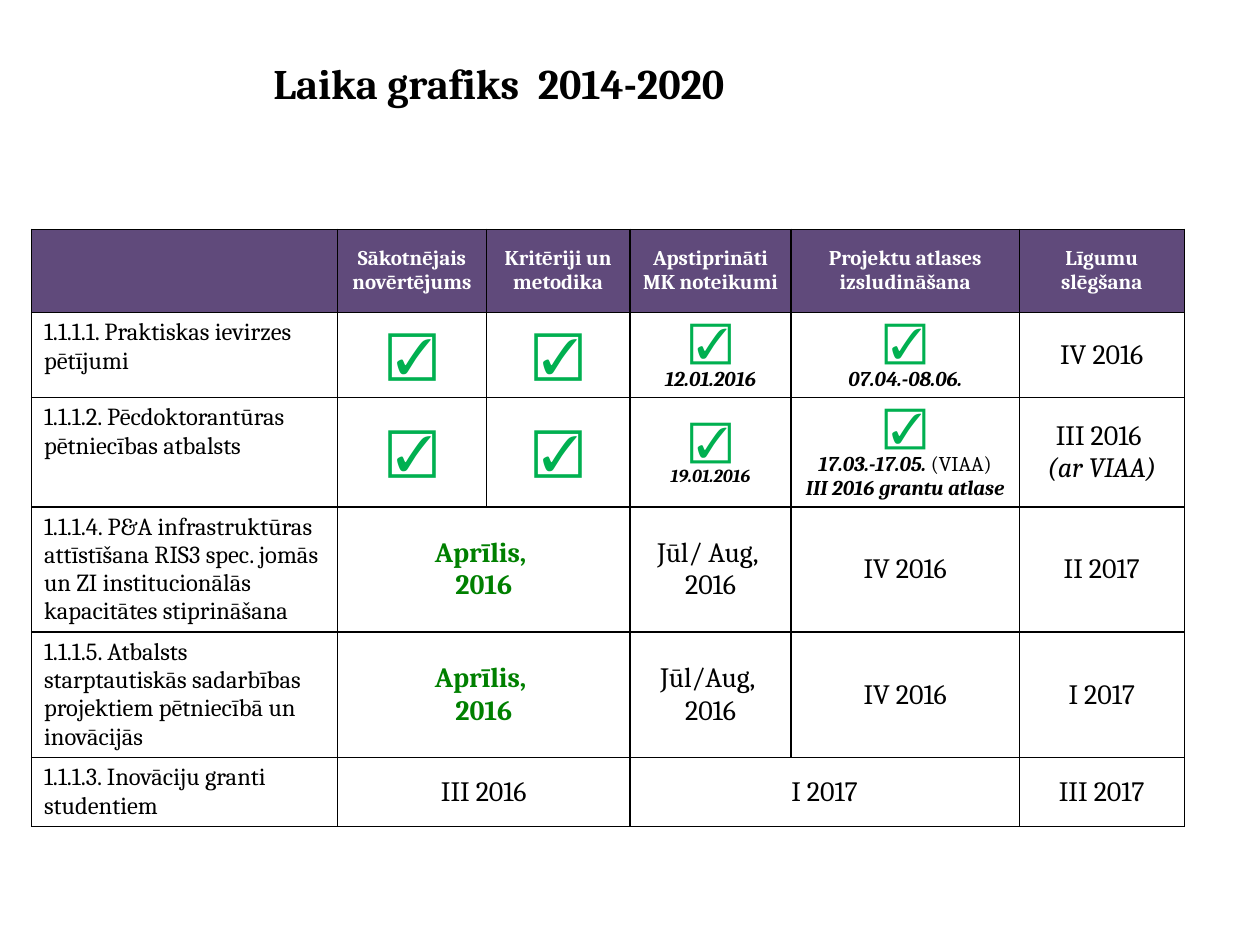
from dataclasses import dataclass

from lxml.etree import SubElement
from pptx import Presentation
from pptx.dml.color import RGBColor
from pptx.enum.text import MSO_ANCHOR, PP_ALIGN
from pptx.oxml.ns import qn
from pptx.table import _Cell
from pptx.text.text import _Paragraph
from pptx.util import Inches, Pt

COLORS = {"header": "604A7B", "white": "FFFFFF", "black": "000000",
          "check": "00B050", "april": "008000"}
FONT = "Cambria"


@dataclass(frozen=True)
class Words:
    text: str
    size: float = 16
    color: str = "black"
    bold: bool = False
    italic: bool = False


@dataclass(frozen=True)
class Entry:
    lines: tuple  # each line is a tuple of Words
    span: int = 1
    fill: str = ""
    align: PP_ALIGN = PP_ALIGN.CENTER
    anchor: MSO_ANCHOR = MSO_ANCHOR.MIDDLE


def entry(*lines: str, span: int = 1, **style) -> Entry:
    return Entry(tuple((Words(line, **style),) for line in lines), span)


def heading(*lines: str) -> Entry:
    words = tuple((Words(line, 12, "white", True),) for line in lines)
    return Entry(words, fill="header")


def measure(text: str) -> Entry:
    return Entry(((Words(text, 14),),), align=PP_ALIGN.LEFT, anchor=MSO_ANCHOR.TOP)


def note(text: str, size: float = 12) -> Words:
    return Words(text, size, bold=True, italic=True)


def checked(*notes: tuple, size: float = 24) -> Entry:
    return Entry(((Words("☑", size, "check"),),) + notes)


def add_text(paragraph: _Paragraph, text: str, *, size: float, color: str = "black",
             bold: bool = False, italic: bool = False) -> None:
    run = paragraph.add_run()
    run.text = text
    font = run.font
    font.name, font.size, font.bold, font.italic = FONT, Pt(size), bold, italic
    font.color.rgb = RGBColor.from_string(COLORS[color])


def add_borders(cell: _Cell) -> None:
    properties = cell._tc.get_or_add_tcPr()
    for side in ("lnL", "lnR", "lnT", "lnB"):
        line = SubElement(properties, qn(f"a:{side}"), w=str(Pt(1)))
        solid = SubElement(line, qn("a:solidFill"))
        SubElement(solid, qn("a:srgbClr"), val=COLORS["black"])


def fill_cell(cell: _Cell, content: Entry) -> None:
    cell.vertical_anchor = content.anchor
    if content.fill:
        cell.fill.solid()
        cell.fill.fore_color.rgb = RGBColor.from_string(COLORS[content.fill])
    frame = cell.text_frame
    for number, line in enumerate(content.lines):
        paragraph = frame.add_paragraph() if number else frame.paragraphs[0]
        paragraph.alignment = content.align
        for words in line:
            add_text(paragraph, words.text, size=words.size, color=words.color,
                     bold=words.bold, italic=words.italic)


# Schedule content
big_check = checked(size=28)
april = entry("Aprīlis, ", "2016", span=2, color="april", bold=True)
SCHEDULE = [
    [heading(), heading("Sākotnējais novērtējums"), heading("Kritēriji un metodika"),
     heading("Apstiprināti MK noteikumi"), heading("Projektu atlases izsludināšana"),
     heading("Līgumu", "slēgšana")],
    [measure("1.1.1.1. Praktiskas ievirzes pētījumi"), big_check, big_check,
     checked((note("12.01.2016"),)), checked((note("07.04.-08.06."),)),
     entry("IV 2016")],
    [measure("1.1.1.2. Pēcdoktorantūras pētniecības atbalsts"), big_check, big_check,
     checked((note("19.01.2016", 10.5),)),
     checked((note("17.03.-17.05. "), Words("(VIAA)", 12)),
             (note("III 2016 grantu atlase"),)),
     Entry(((Words("III 2016 "),), (Words("(ar VIAA)", italic=True),)))],
    [measure("1.1.1.4. P&A infrastruktūras attīstīšana RIS3 spec. jomās un ZI "
             "institucionālās kapacitātes stiprināšana"),
     april, entry("Jūl/ Aug, ", "2016"), entry("IV 2016"), entry("II 2017")],
    [measure("1.1.1.5. Atbalsts starptautiskās sadarbības projektiem pētniecībā "
             "un inovācijās"),
     april, entry("Jūl/Aug, ", "2016"), entry("IV 2016"), entry("I 2017")],
    [measure("1.1.1.3. Inovāciju granti studentiem"), entry("III 2016", span=2),
     entry("I 2017", span=2), entry("III 2017")],
]
COLUMN_WIDTHS = (2.43, 1.18, 1.14, 1.28, 1.81, 1.31)
ROW_HEIGHTS = (0.66, 0.37, 0.65, 0.84, 0.78, 0.34)


def main() -> None:
    presentation = Presentation()
    presentation.slide_width, presentation.slide_height = Inches(10), Inches(7.5)
    slide = presentation.slides.add_slide(presentation.slide_layouts[5])

    # Title
    title = slide.shapes.title
    title.left, title.top = Inches(2.07), Inches(0.41)
    title.width, title.height = Inches(6.67), Inches(1.13)
    title.text_frame.vertical_anchor = MSO_ANCHOR.TOP
    title_line = title.text_frame.paragraphs[0]
    title_line.alignment = PP_ALIGN.LEFT
    add_text(title_line, "Laika grafiks  2014-2020", size=24, bold=True)

    # Schedule grid
    schedule_frame = slide.shapes.add_table(
        len(ROW_HEIGHTS), len(COLUMN_WIDTHS), Inches(0.25), Inches(1.82),
        Inches(9.14), Inches(5.37))
    schedule = schedule_frame.table
    schedule.first_row = schedule.horz_banding = False
    for column, width in zip(schedule.columns, COLUMN_WIDTHS):
        column.width = Inches(width)
    for row, height in zip(schedule.rows, ROW_HEIGHTS):
        row.height = Inches(height)
    schedule_frame.height = Inches(5.37)
    for cell in schedule.iter_cells():
        add_borders(cell)
        cell.fill.background()

    # Schedule entries
    for row_number, entries in enumerate(SCHEDULE):
        column_number = 0
        for content in entries:
            cell = schedule.cell(row_number, column_number)
            column_number += content.span
            if content.span > 1:
                cell.merge(schedule.cell(row_number, column_number - 1))
            fill_cell(cell, content)

    presentation.save("out.pptx")


if __name__ == "__main__":
    main()
